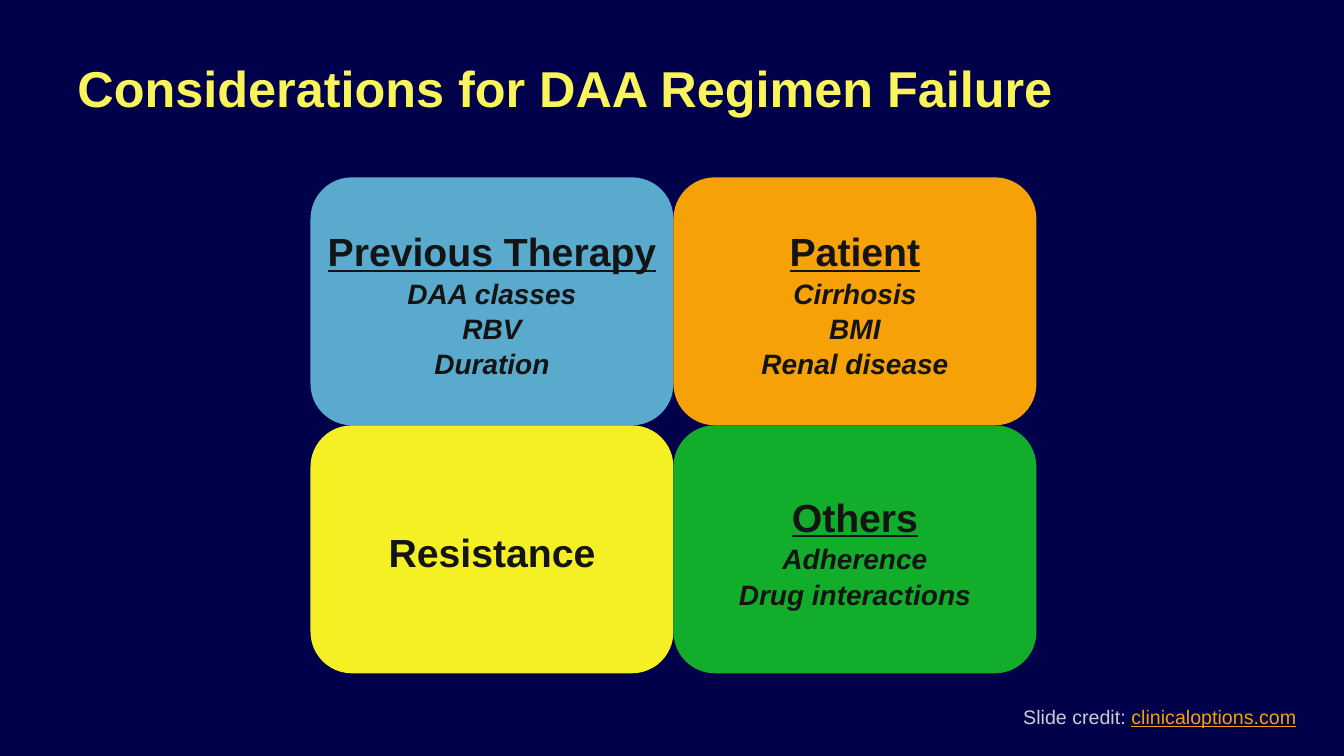
from pptx import Presentation
from pptx.dml.color import RGBColor
from pptx.enum.shapes import MSO_SHAPE
from pptx.enum.text import MSO_ANCHOR, PP_ALIGN
from pptx.util import Inches, Pt

COLORS = {
    "background": "00004B", "title": "F8F45A", "text": "141415",
    "blue": "5AAACE", "orange": "F6A108", "yellow": "F5F024",
    "green": "12AD2B", "credit": "CDCDCF",
}
GRID_LEFT, GRID_TOP = 3.08, 1.76
TILE_W, TILE_H = 3.6, 2.46

# Rows of tiles: heading, details, colour
TILES = [
    [("Previous Therapy", ["DAA classes", "RBV", "Duration"], "blue"),
     ("Patient", ["Cirrhosis", "BMI", "Renal disease"], "orange")],
    [("Resistance", [], "yellow"),
     ("Others", ["Adherence", "Drug interactions"], "green")],
]


def rgb(name):
    return RGBColor.from_string(COLORS[name])


def style(font, size, color, bold=False):
    font.name = "Arial"
    font.size = Pt(size)
    font.bold = bold
    font.color.rgb = rgb(color)


def add_title(s, text):
    tf = s.shapes.add_textbox(Inches(0.67), Inches(0.26),
                              Inches(11.89), Inches(1.21)).text_frame
    tf.word_wrap = True
    tf.vertical_anchor = MSO_ANCHOR.MIDDLE
    p = tf.paragraphs[0]
    p.text = text
    style(p.font, 36, "title", bold=True)


def add_tile(s, left, top, heading, details, color):
    sp = s.shapes.add_shape(MSO_SHAPE.ROUNDED_RECTANGLE, Inches(left),
                            Inches(top), Inches(TILE_W), Inches(TILE_H))
    sp.shadow.inherit = False
    sp.fill.solid()
    sp.fill.fore_color.rgb = rgb(color)
    sp.line.fill.background()
    tf = sp.text_frame
    tf.word_wrap = True
    tf.vertical_anchor = MSO_ANCHOR.MIDDLE
    tf.margin_left = tf.margin_right = 0
    tf.margin_top = Inches(0.1)
    for i, text in enumerate([heading] + details):
        p = tf.add_paragraph() if i else tf.paragraphs[0]
        p.text = text
        p.alignment = PP_ALIGN.CENTER
        style(p.font, 20 if i else 28, "text", bold=True)
        if i:
            p.font.italic = True
            p.space_before = Pt(1.3)
        else:
            p.font.underline = bool(details)


def add_credit(s, label, site):
    tf = s.shapes.add_textbox(Inches(10.05), Inches(6.94),
                              Inches(2.92), Inches(0.34)).text_frame
    tf.word_wrap = False
    p = tf.paragraphs[0]
    for text, color in ((label, "credit"), (site, "orange")):
        r = p.add_run()
        r.text = text
        style(r.font, 14, color)
    r.font.underline = True


def main():
    prs = Presentation()
    prs.slide_width, prs.slide_height = Inches(13.33), Inches(7.5)
    s = prs.slides.add_slide(prs.slide_layouts[6])
    s.background.fill.solid()
    s.background.fill.fore_color.rgb = rgb("background")

    add_title(s, "Considerations for DAA Regimen Failure")

    # Two-by-two grid of considerations
    for row, tiles in enumerate(TILES):
        for col, tile in enumerate(tiles):
            add_tile(s, GRID_LEFT + col * TILE_W, GRID_TOP + row * TILE_H, *tile)

    add_credit(s, "Slide credit: ", "clinicaloptions.com")
    prs.save("out.pptx")


if __name__ == "__main__":
    main()
